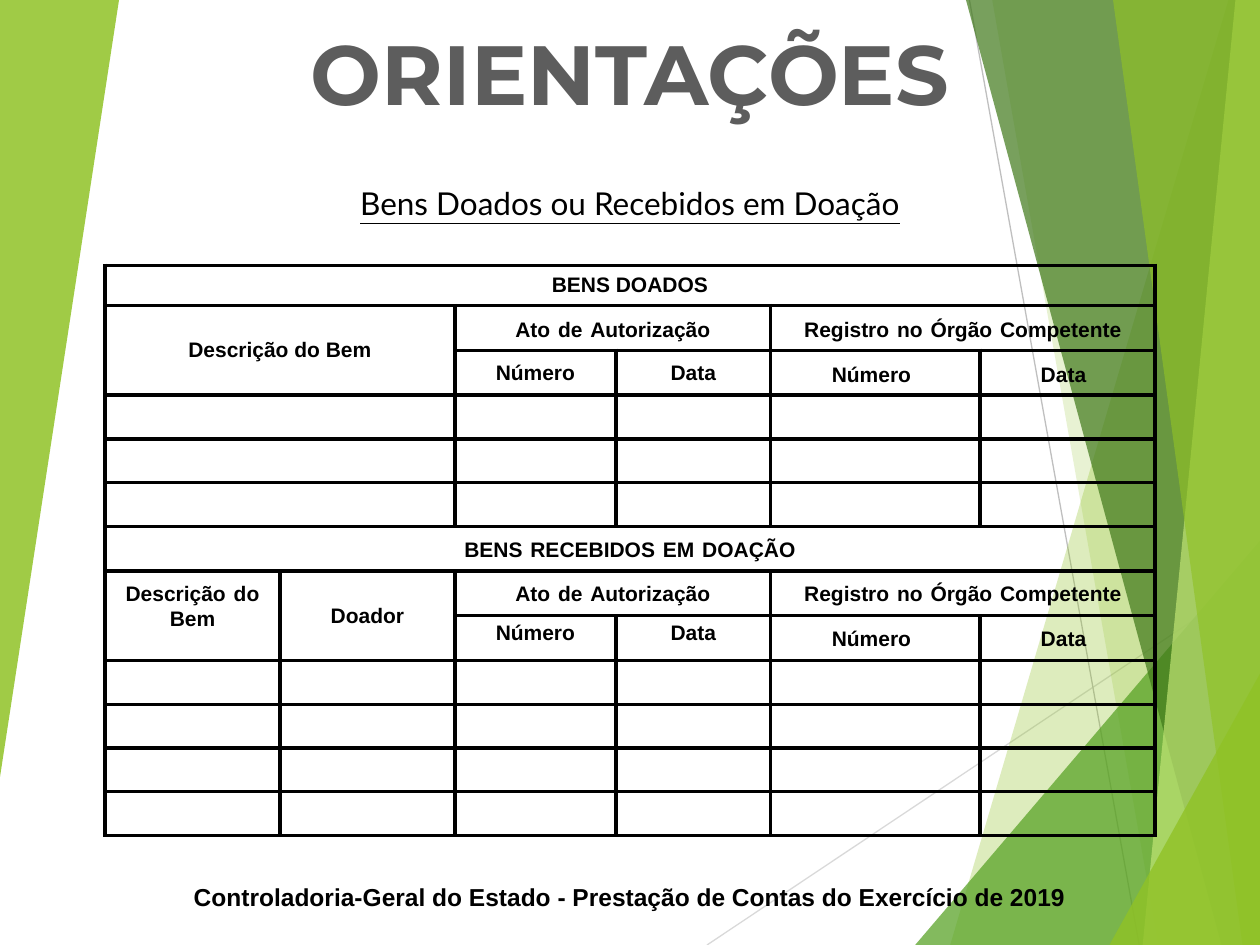
from lxml.etree import SubElement
from pptx import Presentation
from pptx.dml.color import RGBColor
from pptx.enum.shapes import MSO_CONNECTOR
from pptx.enum.text import MSO_ANCHOR, PP_ALIGN
from pptx.oxml import parse_xml
from pptx.oxml.ns import nsdecls, qn
from pptx.util import Pt

COLORS = {
    "ink": "000000", "title": "5D5D5D", "leaf": "90C226", "grass": "54A021",
    "forest": "3F7819", "lime": "C0E474", "mist": "D9D9D9", "ash": "BFBFBF",
}
WIDTH, HEIGHT = 720, 540
TOP, MIDDLE = MSO_ANCHOR.TOP, MSO_ANCHOR.MIDDLE


def rgb(name):
    return RGBColor.from_string(COLORS[name])


class SlideBuilder:
    """Holds the text style and the current slide."""

    cell_font = {"name": "Arial", "bold": True, "size": Pt(12)}
    word_gap = Pt(16)
    cell_margins = {"margin_left": Pt(3), "margin_right": Pt(3),
                    "margin_top": Pt(3.2), "margin_bottom": Pt(3.2)}

    def __init__(self, slide):
        self.slide = slide

    def run(self, paragraph, text, color, formats):
        run = paragraph.add_run()
        run.text = text
        for name, value in formats.items():
            setattr(run.font, name, value)
        run.font.color.rgb = rgb(color)

    def text(self, text, left, top, width, height, color="ink", **formats):
        frame = self.slide.shapes.add_textbox(
            Pt(left), Pt(top), Pt(width), Pt(height)).text_frame
        frame.word_wrap = True
        frame.paragraphs[0].alignment = PP_ALIGN.CENTER
        self.run(frame.paragraphs[0], text, color, formats)

    def line(self, start, end, color):
        line = self.slide.shapes.add_connector(
            MSO_CONNECTOR.STRAIGHT, *(Pt(v) for v in start + end))
        line.line.color.rgb = rgb(color)
        line.line.width = Pt(0.75)
        SubElement(line._element.spPr, qn("a:effectLst"))

    def facet(self, points, color, opacity):
        outline = self.slide.shapes.build_freeform(*points[0], scale=Pt(1))
        outline.add_line_segments(points[1:], close=True)
        facet = outline.convert_to_shape()
        facet.shadow.inherit = False
        facet.line.fill.background()
        facet.fill.solid()
        facet.fill.fore_color.rgb = rgb(color)
        fill = facet._element.spPr.find(qn("a:solidFill"))
        SubElement(fill[0], qn("a:alpha"), val=str(opacity * 1000))

    def table(self, left, top, widths, heights):
        table = self.slide.shapes.add_table(
            len(heights), len(widths), Pt(left), Pt(top),
            Pt(sum(widths)), Pt(sum(heights))).table
        table.first_row = table.horz_banding = False
        for column, width in zip(table.columns, widths):
            column.width = Pt(width)
        for row, height in zip(table.rows, heights):
            row.height = Pt(height)
        for cell in table.iter_cells():
            self.style_cell(cell)
        return table

    def style_cell(self, cell):
        for name, value in self.cell_margins.items():
            setattr(cell, name, value)
        cell.fill.background()
        properties = cell._tc.get_or_add_tcPr()
        for index, side in enumerate("LRTB"):
            properties.insert(index, parse_xml(
                f'<a:ln{side} {nsdecls("a")} w="{Pt(2.25)}"><a:solidFill>'
                f'<a:srgbClr val="{COLORS["ink"]}"/></a:solidFill></a:ln{side}>'))
        # Empty cells keep the small text size, so rows do not grow
        SubElement(cell.text_frame.paragraphs[0]._p, qn("a:endParaRPr"), sz="1200")

    def heading(self, table, row, col, text, rows=1, cols=1, anchor=MIDDLE, wide=True):
        cell = table.cell(row, col)
        if rows * cols > 1:
            cell.merge(table.cell(row + rows - 1, col + cols - 1))
        cell.vertical_anchor = anchor
        paragraph = cell.text_frame.paragraphs[0]
        paragraph.alignment = PP_ALIGN.CENTER
        if not wide:
            self.run(paragraph, text, "ink", self.cell_font)
            return
        for index, word in enumerate(text.split(" ")):
            if index:
                self.run(paragraph, " ", "ink", {**self.cell_font, "size": self.word_gap})
            if word:
                self.run(paragraph, word, "ink", self.cell_font)


def main():
    deck = Presentation()
    deck.slide_width, deck.slide_height = Pt(WIDTH), Pt(HEIGHT)
    builder = SlideBuilder(deck.slides.add_slide(deck.slide_layouts[6]))

    # Background lines and facets
    builder.line((404, HEIGHT), (WIDTH, 329), "mist")
    builder.line((554, 0), (651, HEIGHT), "ash")
    corner = (WIDTH, HEIGHT)
    for start, end, color, opacity in [
        ((702, 0), (543, HEIGHT), "leaf", 30),
        ((567, 0), (662, HEIGHT), "leaf", 20),
        ((WIDTH, 309), (523, HEIGHT), "grass", 72),
        ((552, 0), (698, HEIGHT), "forest", 70),
        ((706, 0), (653, HEIGHT), "lime", 70),
        ((636, 0), (710, HEIGHT), "leaf", 65),
        ((WIDTH, 385), (634, HEIGHT), "leaf", 80),
    ]:
        top_edge = [(WIDTH, 0)] if start[1] == 0 else []
        builder.facet([start, end, corner] + top_edge, color, opacity)
    builder.facet([(0, 0), (67.5, 0), (0, 444)], "leaf", 85)

    # Footer and subtitle
    builder.text("Controladoria-Geral do Estado - Prestação de Contas do Exercício de 2019",
                 36, 500.4, 648, 24.5, name="Arial", size=Pt(14), bold=True)
    builder.text("Bens Doados ou Recebidos em Doação",
                 108, 101.5, 504, 39.6, name="Lato", size=Pt(18), underline=True)

    # Table of donated and received goods
    goods = builder.table(60, 151.6, [100, 100, 92, 88.5, 119.5, 100], [23.1] + [25] * 12)
    builder.heading(goods, 0, 0, "BENS DOADOS", cols=6, wide=False)
    builder.heading(goods, 1, 0, "Descrição do Bem", rows=2, cols=2, wide=False)
    for row in (3, 4, 5):
        goods.cell(row, 0).merge(goods.cell(row, 1))
    builder.heading(goods, 6, 0, "BENS RECEBIDOS EM DOAÇÃO", cols=6, anchor=TOP)
    builder.heading(goods, 7, 0, "Descrição do Bem", rows=2, anchor=TOP)
    builder.heading(goods, 7, 1, "Doador", rows=2)

    # Column headings shared by both sections
    for row, anchor in ((1, MIDDLE), (7, TOP)):
        builder.heading(goods, row, 2, "Ato de Autorização", cols=2, anchor=anchor)
        builder.heading(goods, row, 4, "Registro no Órgão Competente", cols=2, anchor=anchor)
        for col, label in enumerate(("Número", "Data", "Número ", "Data "), start=2):
            builder.heading(goods, row + 1, col, label, anchor=anchor)

    # Title
    builder.text("ORIENTAÇÕES", 4.3, 8.6, 711.4, 65.5, color="title",
                 name="Montserrat", size=Pt(48), bold=True)

    deck.save("out.pptx")


if __name__ == "__main__":
    main()
